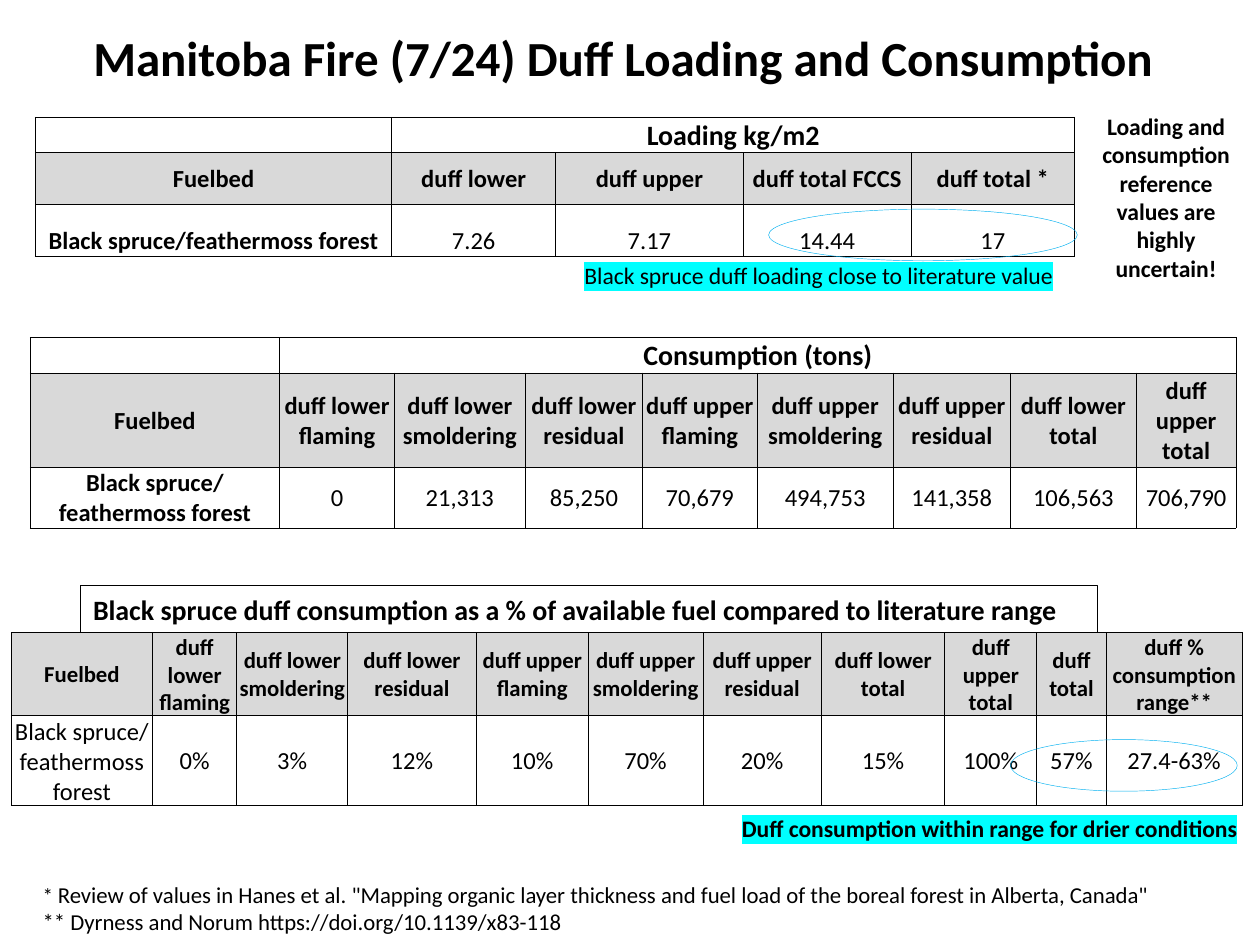
from lxml import etree
from pptx import Presentation
from pptx.dml.color import RGBColor
from pptx.enum.shapes import MSO_SHAPE
from pptx.enum.text import MSO_ANCHOR, PP_ALIGN
from pptx.oxml import parse_xml
from pptx.oxml.ns import nsdecls, qn
from pptx.util import Inches, Pt

LEFT, CENTER = PP_ALIGN.LEFT, PP_ALIGN.CENTER
MIDDLE, BOTTOM = MSO_ANCHOR.MIDDLE, MSO_ANCHOR.BOTTOM
RECT, OVAL = MSO_SHAPE.RECTANGLE, MSO_SHAPE.OVAL

FONT = "Calibri"
BLACK, WHITE, GRAY = "000000", "FFFFFF", "D9D9D9"
CYAN, BLUE = "00FFFF", "00B0F0"

# The slide is a grid of 100 columns and 75 rows
COLS, ROWS = 100, 75
UNIT = Inches(10) / COLS


def rgb(value):
    return RGBColor.from_string(value)


def grid(*cells):
    return [round(c * UNIT) for c in cells]


def within(box, dx, dy, w, h):
    return box[0] + dx, box[1] + dy, w, h


def style_run(r, size, bold=False, highlight=None):
    r.font.name, r.font.size, r.font.bold = FONT, Pt(size), bold
    r.font.color.rgb = rgb(BLACK)
    if highlight:
        mark = parse_xml(f'<a:highlight {nsdecls("a")}><a:srgbClr val="{highlight}"/></a:highlight>')
        r.font._element.find(qn("a:solidFill")).addnext(mark)


def style_text(tf, size, bold=False, align=LEFT, highlight=None):
    for p in tf.paragraphs:
        p.alignment = align
        for r in p.runs:
            style_run(r, size, bold, highlight)


def add_text(slide, box, text, size, bold=False, align=LEFT, highlight=None):
    tf = slide.shapes.add_textbox(*grid(*box)).text_frame
    tf.word_wrap = True
    tf.text = text
    style_text(tf, size, bold, align, highlight)
    return tf


def add_outline(slide, kind, box, color, width):
    sp = slide.shapes.add_shape(kind, *grid(*box))
    sp.shadow.inherit = False
    sp.fill.background()
    sp.line.color.rgb = rgb(color)
    sp.line.width = Pt(width)
    return sp


def add_borders(cell):
    tc_pr = cell._tc.get_or_add_tcPr()
    for side in ("lnL", "lnR", "lnT", "lnB"):
        ln = etree.SubElement(tc_pr, qn(f"a:{side}"), w=str(Pt(0.5)))
        fill = etree.SubElement(ln, qn("a:solidFill"))
        etree.SubElement(fill, qn("a:srgbClr"), val=BLACK)


def fill_cell(cell, text, size, bold, fill, anchor):
    cell.margin_left = cell.margin_right = cell.margin_top = Inches(0.01)
    cell.margin_bottom = 0
    cell.vertical_anchor = anchor
    add_borders(cell)
    cell.fill.solid()
    cell.fill.fore_color.rgb = rgb(fill)
    tf = cell.text_frame
    tf.text = text
    style_text(tf, size, bold, CENTER)
    if not text:
        tf.paragraphs[0]._p.get_or_add_endParaRPr().set("sz", str(size * 100))


def add_data_table(slide, box, widths, heights, header, values, banner=None,
                   header_size=14, bold_label=True, anchor=MIDDLE):
    """Table with a gray header, one row of values and an optional spanning banner."""
    frame = slide.shapes.add_table(len(heights), len(widths), *grid(*box))
    table = frame.table
    table.first_row = table.horz_banding = False
    for column, width in zip(table.columns, grid(*widths)):
        column.width = width
    for row, height in zip(table.rows, grid(*heights)):
        row.height = height
    top = 0
    if banner:
        top = 1
        for c in range(len(widths)):
            fill_cell(table.cell(0, c), banner if c == 1 else "", 16, True, WHITE, BOTTOM)
        table.cell(0, 1).merge(table.cell(0, len(widths) - 1))
    for c, (name, value) in enumerate(zip(header, values)):
        fill_cell(table.cell(top, c), name, header_size, True, GRAY, MIDDLE)
        fill_cell(table.cell(top + 1, c), value, 14, bold_label and c == 0, WHITE, anchor)


def add_title(slide, box):
    title = slide.shapes.title
    title.left, title.top, title.width, title.height = grid(*box)
    tf = title.text_frame
    tf.text = "Manitoba Fire (7/24) Duff Loading and Consumption"
    tf.vertical_anchor = MIDDLE
    tf.paragraphs[0].line_spacing = 0.9
    style_text(tf, 28, True)


def add_loading(slide, box):
    add_data_table(
        slide, within(box, 0, 0, 82.5, 10.9),
        [28.3, 13, 14.9, 13.3, 13], [2.8, 4.1, 4.1],
        ["Fuelbed", "duff lower", "duff upper", "duff total FCCS", "duff total *"],
        ["Black spruce/feathermoss forest", "7.26", "7.17", "14.44", "17"],
        "Loading kg/m2", anchor=BOTTOM)
    add_text(slide, within(box, 42.6, 10.9, 55.6, 3.3),
             "Black spruce duff loading close to literature value", 13.5, highlight=CYAN)
    add_text(slide, within(box, 82.9, -0.9, 13.7, 14.6),
             "Loading and consumption reference values are highly uncertain!",
             13.5, True, CENTER)
    add_outline(slide, OVAL, within(box, 58.2, 7.3, 24.5, 4.1), BLUE, 0.25)


def add_consumption(slide, box):
    parts = [f"duff {layer} {phase}" for layer in ("lower", "upper")
             for phase in ("flaming", "smoldering", "residual")]
    add_data_table(
        slide, box, [19.8, 9.1, 10.4, 9.3, 9.1, 10.8, 9.3, 10, 7.9], [2.8, 7.5, 4.8],
        ["Fuelbed", *parts, "duff lower total", "duff upper total"],
        ["Black spruce/\nfeathermoss forest", "0", "21,313", "85,250", "70,679",
         "494,753", "141,358", "106,563", "706,790"],
        "Consumption (tons)")


def add_share(slide, box):
    heading = add_outline(slide, RECT, within(box, 5.5, 0, 80.7, 3.7), BLACK, 0.75)
    tf = heading.text_frame
    tf.word_wrap = True
    tf.text = "Black spruce duff consumption as a % of available fuel compared to literature range"
    style_text(tf, 16, True)
    parts = [f"duff {layer} {phase}" for layer in ("lower", "upper")
             for phase in ("flaming", "smoldering", "residual")]
    add_data_table(
        slide, within(box, 0, 3.7, 97.6, 13.6),
        [11.2, 6.7, 8.8, 10.2, 8.9, 9.1, 9.4, 9.8, 7.3, 5.5, 10.8], [6.6, 7.1],
        ["Fuelbed", *parts, "duff lower total", "duff upper total", "duff total",
         "duff % consumption range**"],
        ["Black spruce/\nfeathermoss forest", "0%", "3%", "12%", "10%", "70%", "20%",
         "15%", "100%", "57%", "27.4-63%"],
        header_size=13, bold_label=False)
    add_text(slide, within(box, 57, 17.6, 41.5, 3.3),
             "Duff consumption within range for drier conditions", 13.5, True, highlight=CYAN)
    add_outline(slide, OVAL, within(box, 79.3, 12.2, 18, 4.1), BLUE, 0.25)


def add_footnotes(slide, box):
    tf = add_text(slide, box, "* ", 12)
    r = tf.paragraphs[0].add_run()
    r.text = ('Review of values in Hanes et al. "Mapping organic layer thickness '
              'and fuel load of the boreal forest in Alberta, Canada"')
    style_run(r, 13)
    r = tf.add_paragraph().add_run()
    r.text = "** Dyrness and Norum https://doi.org/10.1139/x83-118"
    style_run(r, 13)


def main():
    prs = Presentation()
    prs.slide_width, prs.slide_height = grid(COLS, ROWS)
    slide = prs.slides.add_slide(prs.slide_layouts[5])
    add_title(slide, (6.4, -0.6, 98.3, 10.8))
    add_loading(slide, (2.8, 9.3, 96.6, 14.2))
    add_consumption(slide, (2.4, 26.8, 95.7, 15))
    add_share(slide, (0.9, 46.5, 98.5, 20.9))
    add_footnotes(slide, (2.4, 69.4, 94.5, 5.4))
    prs.save("out.pptx")


if __name__ == "__main__":
    main()
